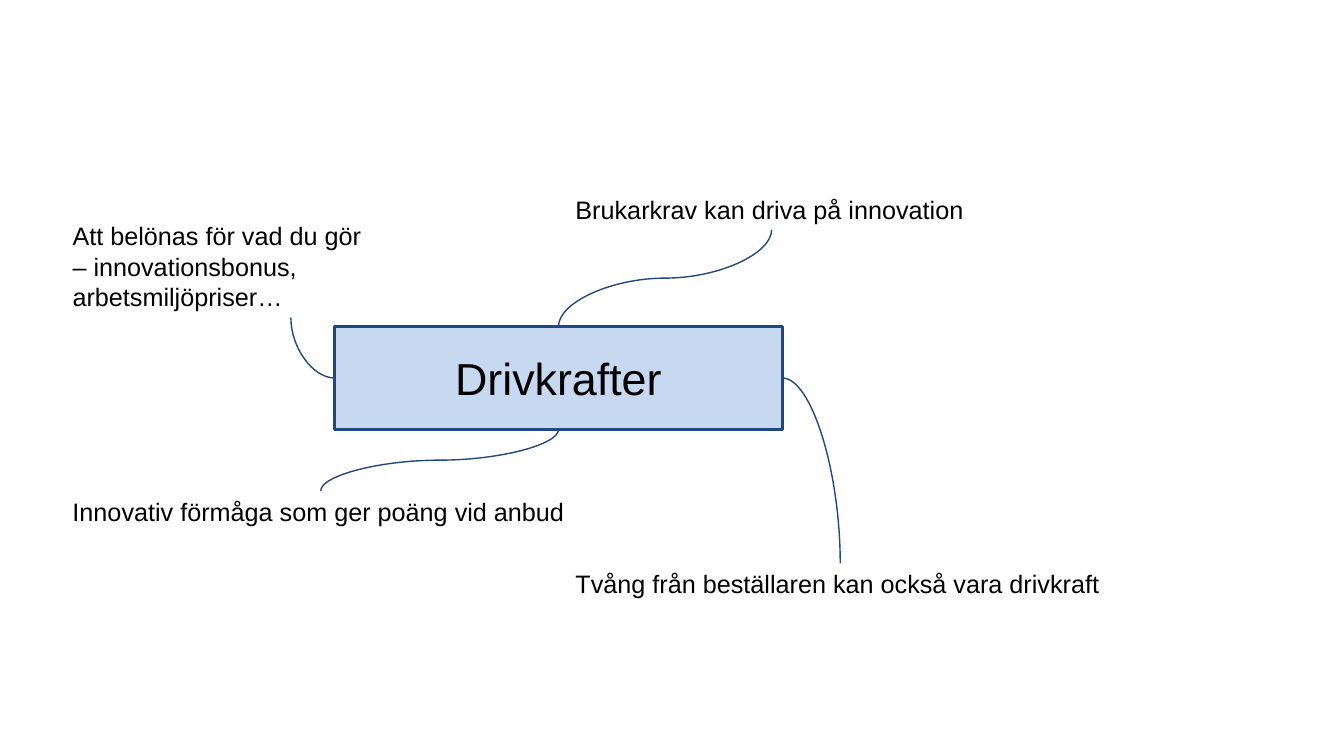
from lxml.etree import SubElement
from pptx import Presentation
from pptx.dml.color import RGBColor
from pptx.enum.shapes import MSO_CONNECTOR, MSO_SHAPE
from pptx.enum.text import MSO_ANCHOR, MSO_AUTO_SIZE, PP_ALIGN
from pptx.oxml.ns import qn
from pptx.util import Inches, Pt

SLIDE_WIDTH, SLIDE_HEIGHT = Inches(13.33), Inches(7.5)
COLUMN, ROW = SLIDE_WIDTH / 64, SLIDE_HEIGHT / 36
LEFT_COLUMN, RIGHT_COLUMN = 2.98, 26.93
LINE_ROWS = 1.92
TOP, LEFT, BOTTOM, RIGHT = range(4)
COLORS = {"text": "000000", "theme": "C6D9F1", "outline": "1F497D"}

THEME_FONT = {"name": "Arial", "size": Pt(32)}
DRIVER_FONT = {"name": "Arial", "size": Pt(18)}
THEME_FRAME = {"word_wrap": True, "vertical_anchor": MSO_ANCHOR.MIDDLE}
DRIVER_FRAME = {"auto_size": MSO_AUTO_SIZE.SHAPE_TO_FIT_TEXT}

DRIVERS = [
    {"text": "Att belönas för vad du gör\v– innovationsbonus, arbetsmiljöpriser…",
     "cells": (LEFT_COLUMN, 10.27, 21.74, 4.85), "wrap": True,
     "from_theme": True, "sides": (LEFT, BOTTOM), "turns": 2, "bends": 2},
    {"text": "Innovativ förmåga som ger poäng vid anbud",
     "cells": (LEFT_COLUMN, 23.38, 24.58, LINE_ROWS), "wrap": False,
     "from_theme": False, "sides": (BOTTOM, TOP), "turns": 1, "bends": 3},
    {"text": "Brukarkrav kan driva på innovation",
     "cells": (RIGHT_COLUMN, 9.02, 19.63, LINE_ROWS), "wrap": False,
     "from_theme": False, "sides": (TOP, BOTTOM), "turns": 1, "bends": 3},
    {"text": "Tvång från beställaren kan också vara drivkraft",
     "cells": (RIGHT_COLUMN, 26.83, 26.16, LINE_ROWS), "wrap": False,
     "from_theme": False, "sides": (RIGHT, TOP), "turns": 3, "bends": 2},
]


def color(name):
    """Return the named colour."""
    return RGBColor.from_string(COLORS[name])


def apply(target, values):
    """Set each attribute of the target from a dict."""
    for attribute, value in values.items():
        setattr(target, attribute, value)


def to_box(columns, rows, width, height):
    """Turn grid cells into slide lengths."""
    return (round(columns * COLUMN), round(rows * ROW),
            round(width * COLUMN), round(height * ROW))


def write(shape, text, frame_format, font_format, alignment):
    """Fill a shape with one formatted paragraph."""
    apply(shape.text_frame, frame_format)
    paragraph = shape.text_frame.paragraphs[0]
    paragraph.text = text
    paragraph.alignment = alignment
    apply(paragraph.font, font_format)
    paragraph.font.color.rgb = color("text")


def add_theme(slide, box):
    """Draw the central theme in its box."""
    theme = slide.shapes.add_shape(MSO_SHAPE.RECTANGLE, *box)
    theme.shadow.inherit = False
    theme.fill.solid()
    theme.fill.fore_color.rgb = color("theme")
    theme.line.color.rgb = color("outline")
    theme.line.width = Pt(2.25)
    write(theme, "Drivkrafter", THEME_FRAME, THEME_FONT, PP_ALIGN.CENTER)
    return theme


def add_driver(slide, box, text, wrap):
    """Place one driver text in its box."""
    driver = slide.shapes.add_textbox(*box)
    write(driver, text, {**DRIVER_FRAME, "word_wrap": wrap}, DRIVER_FONT, PP_ALIGN.LEFT)
    return driver


def side_middle(shape, side):
    """Return the middle point of a shape's side."""
    across = {LEFT: 0, RIGHT: 1}.get(side, 0.5)
    down = {TOP: 0, BOTTOM: 1}.get(side, 0.5)
    return shape.left + shape.width * across, shape.top + shape.height * down


def add_curve(slide, start, end, turns, bends):
    """Join two (shape, side) ends by a curve rotated in quarter turns."""
    (x1, y1), (x2, y2) = side_middle(*start), side_middle(*end)
    center_x, center_y = (x1 + x2) / 2, (y1 + y2) / 2
    half_x, half_y = (x2 - x1) / 2, (y2 - y1) / 2
    for _ in range(turns):
        half_x, half_y = half_y, -half_x
    curve = slide.shapes.add_connector(MSO_CONNECTOR.CURVE, 0, 0, 0, 0)
    curve.begin_connect(*start)
    curve.end_connect(*end)
    apply(curve, {"begin_x": round(center_x - half_x), "begin_y": round(center_y - half_y),
                  "end_x": round(center_x + half_x), "end_y": round(center_y + half_y)})
    curve.line.color.rgb = color("outline")
    curve.line.width = Pt(1)
    properties = curve.element.spPr
    properties.find(qn("a:xfrm")).set("rot", str(turns * 5400000))
    properties.find(qn("a:prstGeom")).set("prst", f"curvedConnector{bends}")
    SubElement(properties, qn("a:effectLst"))


def add_mind_map(slide):
    """Draw the theme, its drivers and the curves between them."""
    theme = add_theme(slide, to_box(15.94, 15.55, 21.31, 4.9))
    for entry in DRIVERS:
        driver = add_driver(slide, to_box(*entry["cells"]), entry["text"], entry["wrap"])
        theme_side, driver_side = entry["sides"]
        ends = [(driver, driver_side), (theme, theme_side)]
        if entry["from_theme"]:
            ends.reverse()
        add_curve(slide, *ends, entry["turns"], entry["bends"])


def main():
    """Build and save the slide."""
    presentation = Presentation()
    apply(presentation, {"slide_width": SLIDE_WIDTH, "slide_height": SLIDE_HEIGHT})
    add_mind_map(presentation.slides.add_slide(presentation.slide_layouts[6]))
    presentation.save("out.pptx")


if __name__ == "__main__":
    main()
